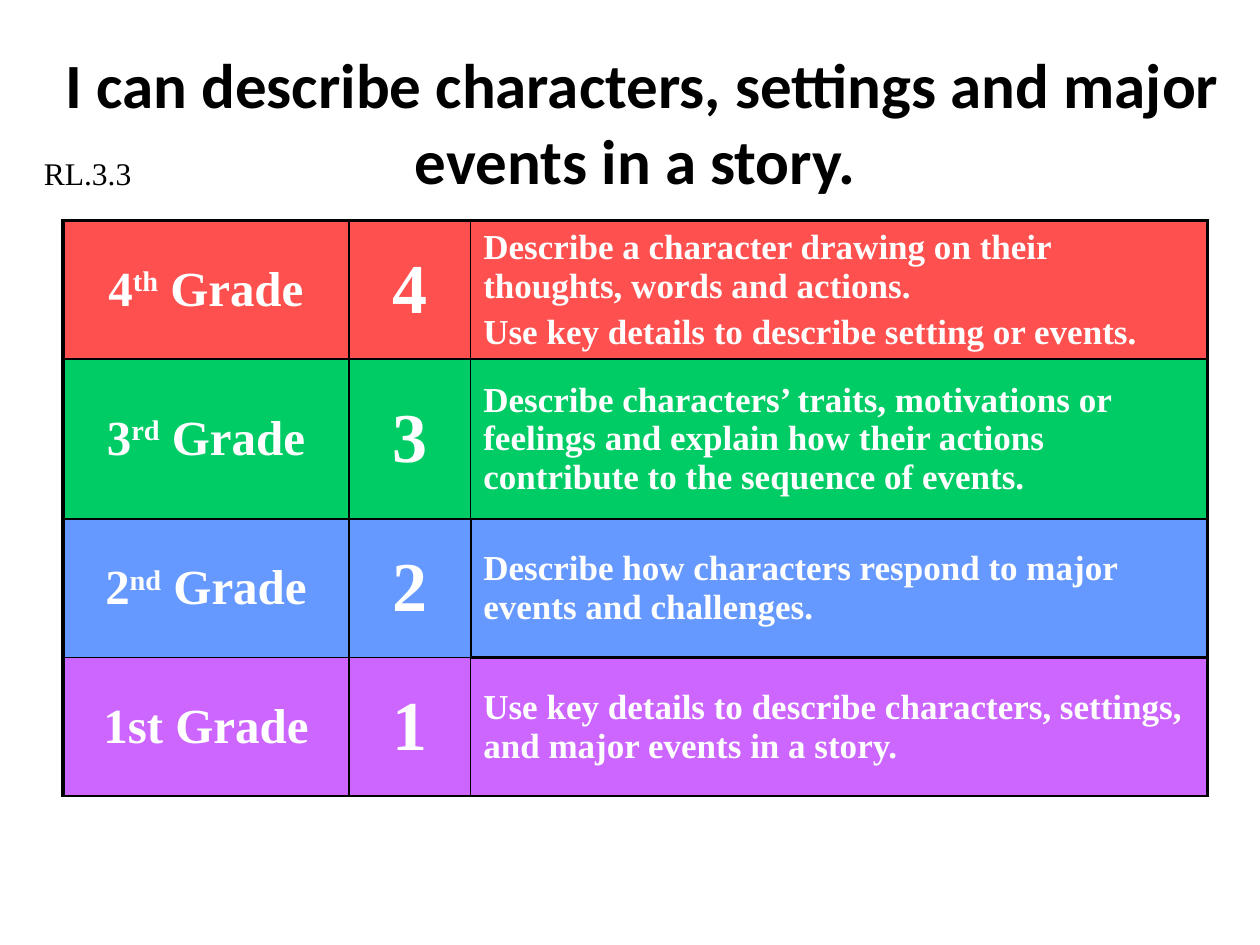
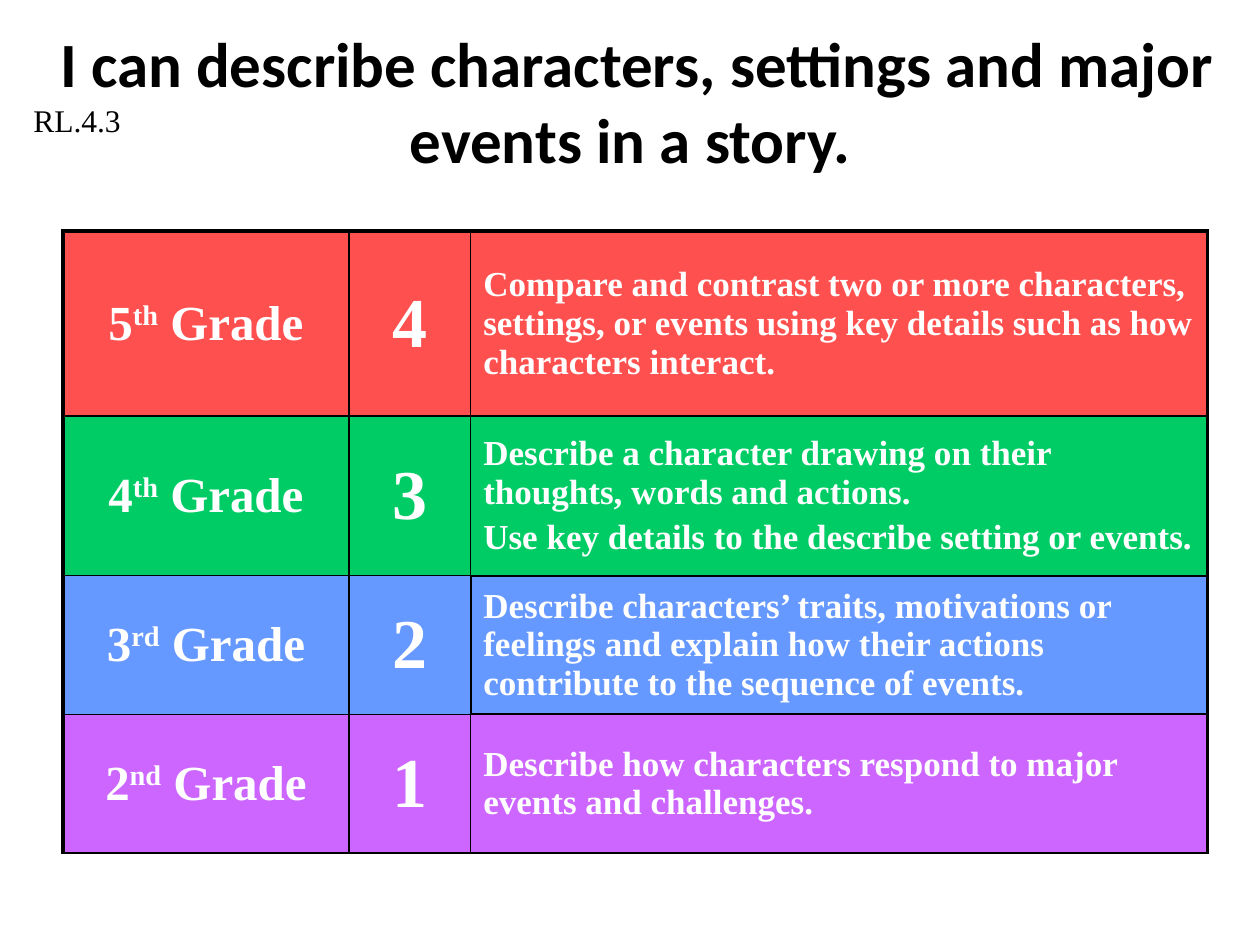
import pptx
import pptx.dml.color
import pptx.enum.text
import pptx.oxml
import pptx.oxml.ns
import pptx.util

Pt = pptx.util.Pt
ALIGN = pptx.enum.text.PP_ALIGN
ANCHOR = pptx.enum.text.MSO_ANCHOR

COLOURS = {
    "ink": "000000", "text": "FFFFFF",
    4: "FF5050", 3: "00CC66", 2: "6699FF", 1: "CC66FF",
}
TITLE_FONT, BODY_FONT = "Calibri", "Times New Roman"
GOAL = " I can describe characters, settings and major events in a story."

DRAWING = "Describe a character drawing on their thoughts, words and actions."
TRAITS = ("Describe characters’ traits, motivations or feelings and explain "
          "how their actions contribute to the sequence of events.")
RESPOND = "Describe how characters respond to major events and challenges."

# Each level: score, grade (number, raised ending, rest), row height, descriptions
SCALES = [
    {
        "standard": "RL.3.3", "standard_at": (18, 84.24),
        "title_box": (18, 12, 690, 72), "table_top": 126,
        "levels": [
            (4, ("4", "th", " Grade"), 79.2,
             [DRAWING, "Use key details to describe setting or events."]),
            (3, ("3", "rd", " Grade"), 91.4, [TRAITS]),
            (2, ("2", "nd", " Grade"), 79.2, [RESPOND]),
            (1, ("1st Grade",), 79.2,
             ["Use key details to describe characters, settings, "
              "and major events in a story."]),
        ],
    },
    {
        "standard": "RL.4.3", "standard_at": (12, 54),
        "title_box": (0, 0, 720, 72), "table_top": 132,
        "levels": [
            (4, ("5", "th", " Grade"), 105.6,
             ["Compare and contrast two or more characters, settings, or events "
              "using key details such as how characters interact."]),
            (3, ("4", "th", " Grade"), 91.4,
             [DRAWING, "Use key details to the describe setting or events."]),
            (2, ("3", "rd", " Grade"), 79.2, [TRAITS]),
            (1, ("2", "nd", " Grade"), 79.2, [RESPOND]),
        ],
    },
]

TABLE_LEFT = 36
COLUMN_WIDTHS = (163.4, 69.6, 421)
# Rule widths, from top to bottom and from left to right
ROW_RULES = (2.25, 1.5, 1, 1, 1.5)
DESCRIPTION_RULES = (2.25, 1.5, 1.5, 1.5, 1.5)
COLUMN_RULES = (2.25, 1, 1, 2.25)
SECOND_LEVEL_RULES = (2.25, 1.5, 1.5, 1.5)


def rgb(name):
    return pptx.dml.color.RGBColor.from_string(COLOURS[name])


def add_run(paragraph, text, size, colour="text", font=BODY_FONT, bold=True):
    run = paragraph.add_run()
    run.text = text
    run.font.size = Pt(size)
    run.font.name = font
    run.font.bold = bold
    run.font.color.rgb = rgb(colour)
    return run


def add_title(slide, box):
    title = slide.shapes.title
    title.left, title.top, title.width, title.height = map(Pt, box)
    frame = title.text_frame
    frame.word_wrap = True
    frame.auto_size = pptx.enum.text.MSO_AUTO_SIZE.NONE
    frame.vertical_anchor = ANCHOR.TOP
    frame.margin_top = Pt(14)
    goal = frame.paragraphs[0]
    goal.alignment = ALIGN.CENTER
    add_run(goal, GOAL, 36, "ink", TITLE_FONT)


def rule_cell(cell, row, column):
    across = DESCRIPTION_RULES if column == 2 else ROW_RULES
    down = SECOND_LEVEL_RULES if row == 2 else COLUMN_RULES
    widths = {"lnL": down[column], "lnR": down[column + 1],
              "lnT": across[row], "lnB": across[row + 1]}
    properties = cell._tc.get_or_add_tcPr()
    for side, width in widths.items():
        properties.append(pptx.oxml.parse_xml(
            f'<a:{side} {pptx.oxml.ns.nsdecls("a")} w="{Pt(width)}"><a:solidFill>'
            f'<a:srgbClr val="{COLOURS["ink"]}"/></a:solidFill></a:{side}>'))


def fill_cell(cell, paragraphs, size, alignment):
    """Write paragraphs, each a tuple of runs whose second one is raised."""
    cell.vertical_anchor = ANCHOR.MIDDLE
    frame = cell.text_frame
    for index, parts in enumerate(paragraphs):
        paragraph = frame.add_paragraph() if index else frame.paragraphs[0]
        paragraph.alignment = alignment
        paragraph.space_before = Pt(size * 0.2)
        for position, part in enumerate(parts):
            run = add_run(paragraph, part, size)
            if position == 1:
                run._r.get_or_add_rPr().set("baseline", "30000")


def add_scale(slide, levels, top):
    heights = [height for _, _, height, _ in levels]
    scale = slide.shapes.add_table(
        len(levels), len(COLUMN_WIDTHS), Pt(TABLE_LEFT), Pt(top),
        Pt(sum(COLUMN_WIDTHS)), Pt(sum(heights))).table
    scale.first_row = scale.horz_banding = False
    for column, width in zip(scale.columns, COLUMN_WIDTHS):
        column.width = Pt(width)
    for row, (score, grade, height, descriptions) in enumerate(levels):
        scale.rows[row].height = Pt(height)
        contents = (
            ([grade], 28, ALIGN.CENTER),
            ([(str(score),)], 40, ALIGN.CENTER),
            ([(line,) for line in descriptions], 20, ALIGN.LEFT),
        )
        for column, content in enumerate(contents):
            cell = scale.cell(row, column)
            rule_cell(cell, row, column)
            cell.fill.solid()
            cell.fill.fore_color.rgb = rgb(score)
            fill_cell(cell, *content)


def add_standard(slide, text, position):
    standard = slide.shapes.add_textbox(*map(Pt, position), Pt(102), Pt(28.8))
    standard.text_frame.word_wrap = True
    add_run(standard.text_frame.paragraphs[0], text, 18, "ink", bold=False)


def main():
    deck = pptx.Presentation()
    deck.slide_width, deck.slide_height = Pt(720), Pt(540)
    title_only = deck.slide_layouts.get_by_name("Title Only")
    for scale in SCALES:
        slide = deck.slides.add_slide(title_only)
        add_title(slide, scale["title_box"])
        add_scale(slide, scale["levels"], scale["table_top"])
        add_standard(slide, scale["standard"], scale["standard_at"])
    deck.save("out.pptx")


if __name__ == "__main__":
    main()
